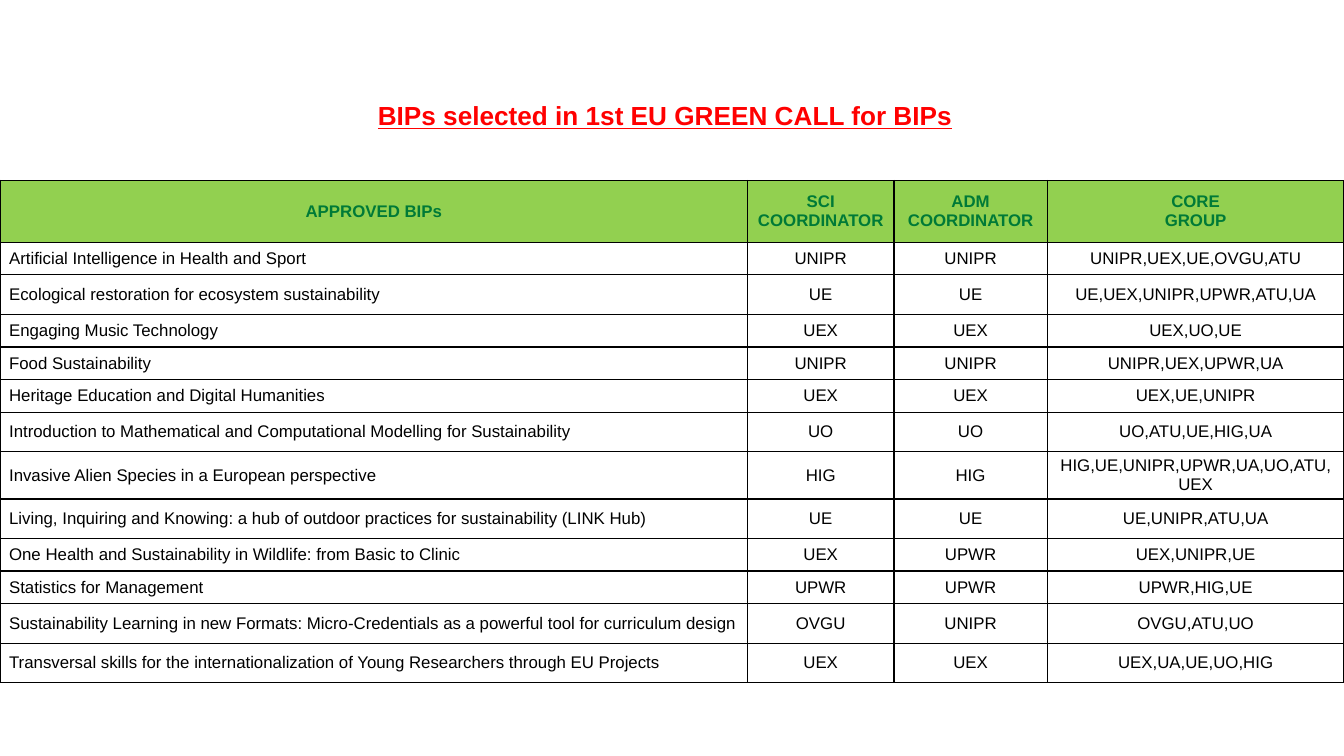
from lxml import etree
from pptx import Presentation
from pptx.dml.color import RGBColor
from pptx.enum.text import MSO_ANCHOR, PP_ALIGN
from pptx.oxml.ns import qn
from pptx.util import Pt

LEFT, CENTER = PP_ALIGN.LEFT, PP_ALIGN.CENTER
MIDDLE = MSO_ANCHOR.MIDDLE
RED = RGBColor(0xFF, 0x00, 0x00)
GREEN = RGBColor(0x00, 0x7A, 0x37)
LIME = RGBColor(0x92, 0xD0, 0x50)
BLACK = RGBColor(0x00, 0x00, 0x00)
FONT = "Arial"
EDGE = 0.75

WIDTHS = [400.4, 78.5, 82.1, 159]
HEAD, LOW, MID, TALL = 33.1, 17.5, 21.2, 25.2
TITLES = ["APPROVED BIPs", "SCI COORDINATOR", "ADM COORDINATOR", "CORE\nGROUP"]
ROWS = [
    (LOW, "Artificial Intelligence in Health and Sport", "UNIPR", "UNIPR", "UNIPR,UEX,UE,OVGU,ATU"),
    (MID, "Ecological restoration for ecosystem sustainability", "UE", "UE", "UE,UEX,UNIPR,UPWR,ATU,UA"),
    (LOW, "Engaging Music Technology", "UEX", "UEX", "UEX,UO,UE"),
    (LOW, "Food Sustainability", "UNIPR", "UNIPR", "UNIPR,UEX,UPWR,UA"),
    (LOW, "Heritage Education and Digital Humanities", "UEX", "UEX", "UEX,UE,UNIPR"),
    (MID, "Introduction to Mathematical and Computational Modelling for Sustainability",
     "UO", "UO", "UO,ATU,UE,HIG,UA"),
    (TALL, "Invasive Alien Species in a European perspective",
     "HIG", "HIG", "HIG,UE,UNIPR,UPWR,UA,UO,ATU,UEX"),
    (MID, "Living, Inquiring and Knowing: a hub of outdoor practices for sustainability (LINK Hub)",
     "UE", "UE", "UE,UNIPR,ATU,UA"),
    (LOW, "One Health and Sustainability in Wildlife: from Basic to Clinic",
     "UEX", "UPWR", "UEX,UNIPR,UE"),
    (LOW, "Statistics for Management", "UPWR", "UPWR", "UPWR,HIG,UE"),
    (MID, "Sustainability Learning in new Formats: Micro-Credentials as a powerful tool for curriculum design",
     "OVGU", "UNIPR", "OVGU,ATU,UO"),
    (MID, "Transversal skills for the internationalization of Young Researchers through EU Projects",
     "UEX", "UEX", "UEX,UA,UE,UO,HIG"),
]


def write(frame, text, size, color, bold, align):
    for i, line in enumerate(text.split("\n")):
        para = frame.add_paragraph() if i else frame.paragraphs[0]
        para.alignment = align
        run = para.add_run()
        run.text = line
        run.font.name = FONT
        run.font.size = Pt(size)
        run.font.bold = bold
        run.font.color.rgb = color
    return run


def add_title(slide):
    box = slide.shapes.add_textbox(Pt(38.2), Pt(49.7), Pt(609), Pt(24.5))
    frame = box.text_frame
    frame.word_wrap = True
    frame.margin_left = Pt(34.4)
    run = write(frame, "BIPs selected in 1st EU GREEN CALL for BIPs", 14, RED, True, CENTER)
    run.font.underline = True


def add_edges(cell):
    props = cell._tc.get_or_add_tcPr()
    for side in ("lnL", "lnR", "lnT", "lnB"):
        line = etree.SubElement(props, qn(f"a:{side}"), w=str(Pt(EDGE)))
        fill = etree.SubElement(line, qn("a:solidFill"))
        etree.SubElement(fill, qn("a:srgbClr"), val=str(BLACK))


def fill_cell(cell, text, head, align):
    cell.margin_left = cell.margin_right = Pt(4.9)
    cell.margin_top = cell.margin_bottom = Pt(0)
    cell.vertical_anchor = MIDDLE
    add_edges(cell)
    if head:
        cell.fill.solid()
        cell.fill.fore_color.rgb = LIME
    else:
        cell.fill.background()
    write(cell.text_frame, text, 9, GREEN if head else BLACK, head, align)


def add_grid(slide):
    rows = [(HEAD, *TITLES)] + ROWS
    total = sum(row[0] for row in rows)
    table = slide.shapes.add_table(
        len(rows), len(WIDTHS), Pt(0), Pt(96.7), Pt(sum(WIDTHS)), Pt(total)).table
    table.first_row = table.horz_banding = False
    for col, width in zip(table.columns, WIDTHS):
        col.width = Pt(width)
    for r, (height, *texts) in enumerate(rows):
        table.rows[r].height = Pt(height)
        for c, text in enumerate(texts):
            align = LEFT if r and c == 0 else CENTER
            fill_cell(table.cell(r, c), text, r == 0, align)


def main():
    deck = Presentation()
    deck.slide_width, deck.slide_height = Pt(720), Pt(405)
    slide = deck.slides.add_slide(deck.slide_layouts[6])
    add_title(slide)
    add_grid(slide)
    deck.save("out.pptx")


if __name__ == "__main__":
    main()
